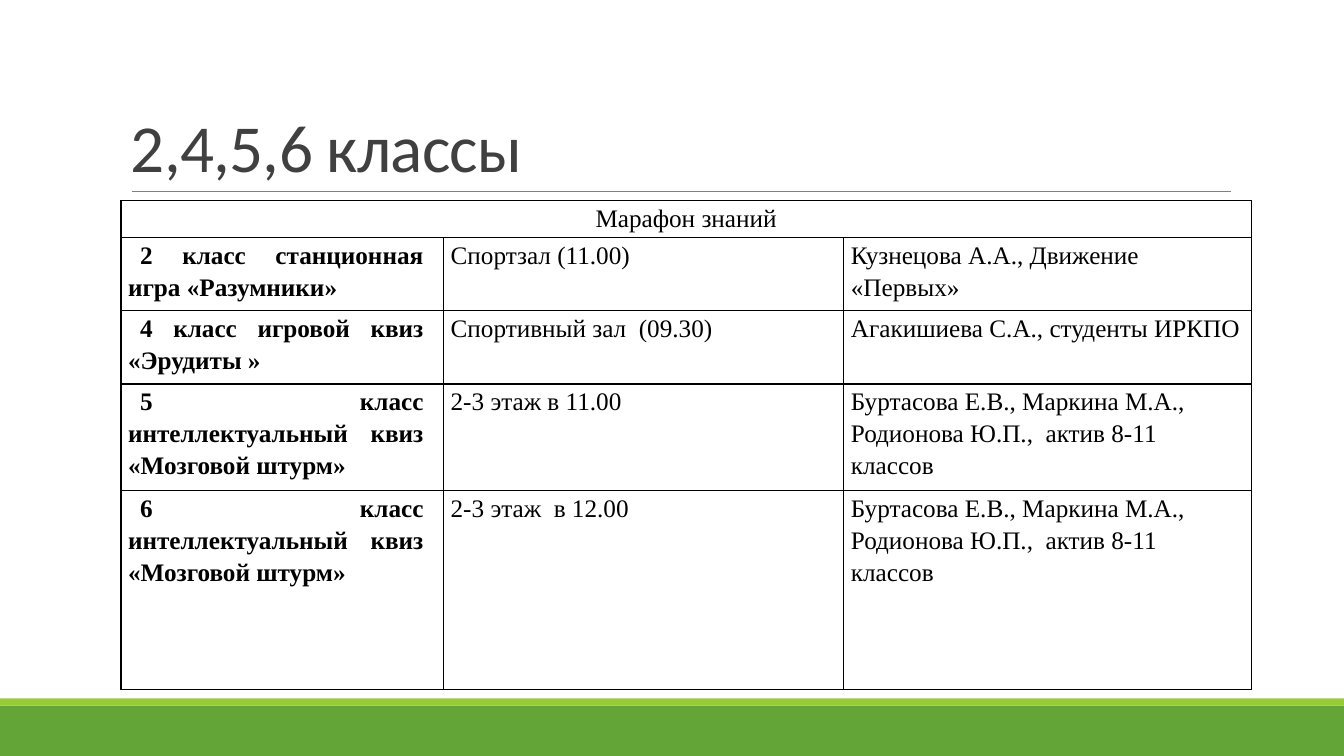
"""Builds the slide with the knowledge marathon timetable for grades 2, 4, 5 and 6."""
from lxml.etree import SubElement
from pptx import Presentation
from pptx.dml.color import RGBColor
from pptx.enum.shapes import MSO_CONNECTOR, MSO_SHAPE
from pptx.enum.text import MSO_ANCHOR, PP_ALIGN
from pptx.oxml.ns import qn
from pptx.util import Inches, Pt

COLORS = {"green": "63A537", "lime": "99CB38", "rule": "808080", "title": "404040", "ink": "000000"}
WIDTH, HEIGHT = 13.33, 7.5
LEFT = 1.2
COLUMNS = [3.2, 3.97, 4.04]
ROWS = [0.37, 0.72, 0.73, 1.06, 1.97]
TEACHERS = "Буртасова Е.В., Маркина М.А., Родионова Ю.П.,  актив 8-11 классов"
TIMETABLE = [
    ["Марафон знаний"],
    ["2 класс станционная игра «Разумники»", "Спортзал (11.00)", "Кузнецова А.А., Движение «Первых»"],
    ["4 класс игровой квиз «Эрудиты »", "Спортивный зал  (09.30)", "Агакишиева С.А., студенты ИРКПО"],
    ["5 класс интеллектуальный квиз «Мозговой штурм»", "2-3 этаж в 11.00", TEACHERS],
    ["6 класс интеллектуальный квиз «Мозговой штурм»", "2-3 этаж  в 12.00", TEACHERS],
]


def style(paragraph, font_name, size, color, spacing):
    paragraph.line_spacing = spacing
    for run in paragraph.runs:
        run.font.name = font_name
        run.font.size = Pt(size)
        run.font.color.rgb = RGBColor.from_string(COLORS[color])


def add_borders(cell):
    properties = cell._tc.get_or_add_tcPr()
    for side in ("a:lnL", "a:lnR", "a:lnT", "a:lnB"):
        border = SubElement(properties, qn(side), w=str(Pt(1)))
        SubElement(SubElement(border, qn("a:solidFill")), qn("a:srgbClr"), val=COLORS["ink"])


prs = Presentation()
prs.slide_width, prs.slide_height = Inches(WIDTH), Inches(HEIGHT)
slide = prs.slides.add_slide(prs.slide_layouts[6])

for top, height, color in [(7, 0.5, "green"), (6.93, 0.07, "lime")]:
    band = slide.shapes.add_shape(MSO_SHAPE.RECTANGLE, 0, Inches(top), Inches(WIDTH), Inches(height))
    band.shadow.inherit = False
    band.fill.solid()
    band.fill.fore_color.rgb = RGBColor.from_string(COLORS[color])
    band.line.fill.background()

title_rule = slide.shapes.add_connector(
    MSO_CONNECTOR.STRAIGHT, Inches(1.31), Inches(1.9), Inches(12.21), Inches(1.9))
title_rule.line.color.rgb = RGBColor.from_string(COLORS["rule"])
title_rule.line.width = Pt(0.5)
SubElement(title_rule._element.spPr, qn("a:effectLst"))

title = slide.shapes.add_textbox(Inches(LEFT), Inches(0.31), Inches(11), Inches(1.59)).text_frame
title.word_wrap = True
title.vertical_anchor = MSO_ANCHOR.BOTTOM
title.text = "2,4,5,6 классы"
style(title.paragraphs[0], "Calibri", 48, "title", 0.85)
title.paragraphs[0].runs[0].font._element.set("spc", "-50")

timetable = slide.shapes.add_table(
    len(ROWS), len(COLUMNS), Inches(LEFT), Inches(1.99), Inches(sum(COLUMNS)), Inches(sum(ROWS))).table
for column, width in zip(timetable.columns, COLUMNS):
    column.width = Inches(width)
for row, height in zip(timetable.rows, ROWS):
    row.height = Inches(height)
timetable.cell(0, 0).merge(timetable.cell(0, len(COLUMNS) - 1))

for r, entries in enumerate(TIMETABLE):
    for c, entry in enumerate(entries):
        cell = timetable.cell(r, c)
        cell.text_frame.text = entry
        cell.margin_left = cell.margin_right = Inches(0.07)
        cell.margin_top = cell.margin_bottom = 0
        paragraph = cell.text_frame.paragraphs[0]
        style(paragraph, "Times New Roman", 18, "ink", 1.15)
        if r == 0:
            paragraph.alignment = PP_ALIGN.CENTER
        elif c == 0:
            cell.margin_right = Inches(0.2)
            paragraph.alignment = PP_ALIGN.JUSTIFY
            paragraph._p.get_or_add_pPr().set("indent", str(Inches(0.12)))
            paragraph.runs[0].font.bold = True

for cell in timetable.iter_cells():
    add_borders(cell)
    cell.fill.background()
timetable.first_row = timetable.horz_banding = False

prs.save("out.pptx")
